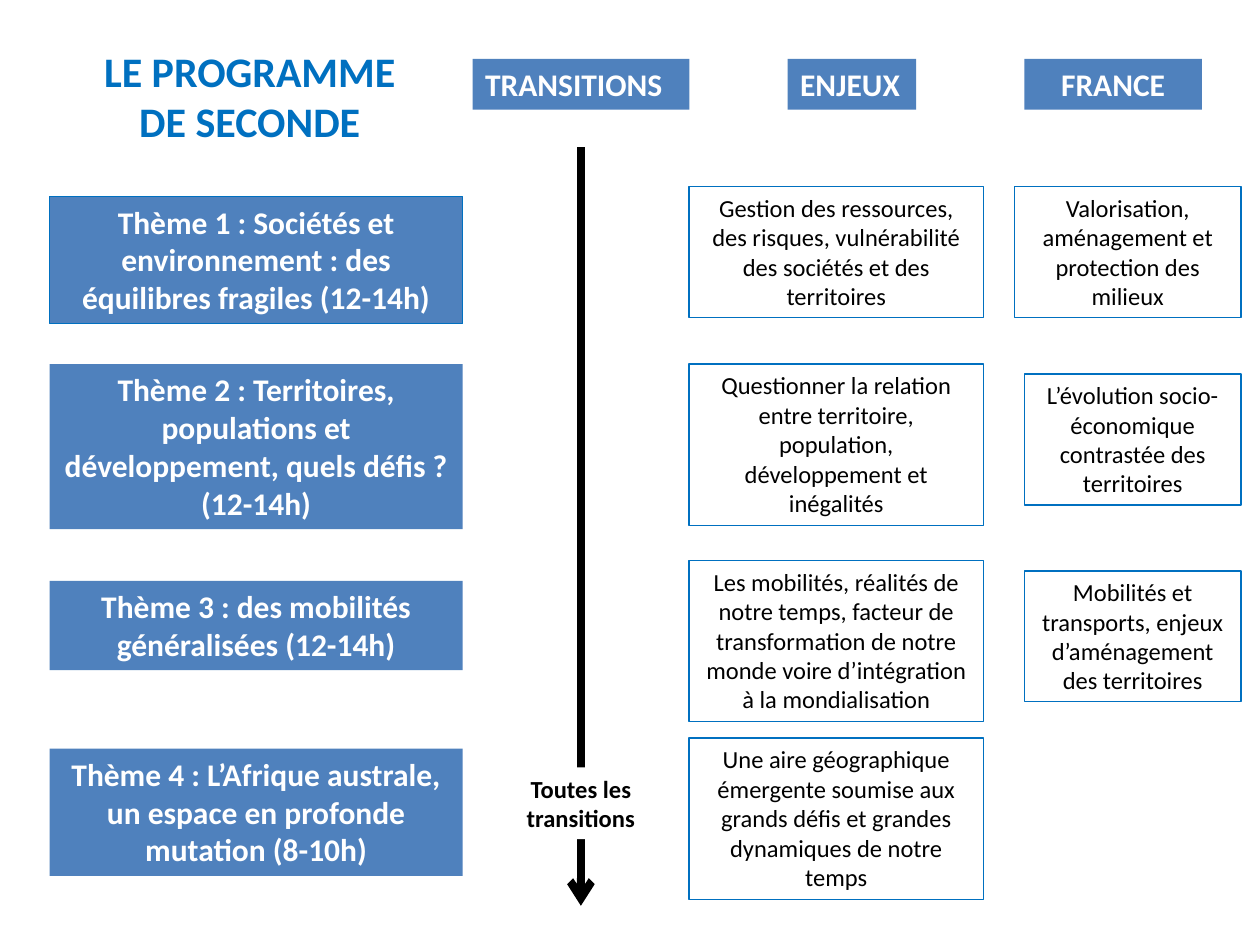
from dataclasses import dataclass
from typing import NamedTuple

from lxml import etree
from pptx import Presentation
from pptx.dml.color import RGBColor
from pptx.enum.shapes import MSO_CONNECTOR, MSO_SHAPE
from pptx.enum.text import MSO_ANCHOR, MSO_AUTO_SIZE, PP_ALIGN
from pptx.oxml.ns import qn
from pptx.util import Cm, Pt

RECTANGLE = MSO_SHAPE.RECTANGLE
STRAIGHT = MSO_CONNECTOR.STRAIGHT
LEFT, CENTER = PP_ALIGN.LEFT, PP_ALIGN.CENTER
TOP = MSO_ANCHOR.TOP
GROW = MSO_AUTO_SIZE.SHAPE_TO_FIT_TEXT
TITLE_ONLY = 5


@dataclass(frozen=True)
class Theme:
    """Colours, type and line widths of the slide."""
    font: str = "Calibri"
    blue: RGBColor = RGBColor(0x4F, 0x81, 0xBD)
    accent: RGBColor = RGBColor(0x00, 0x70, 0xC0)
    white: RGBColor = RGBColor(0xFF, 0xFF, 0xFF)
    black: RGBColor = RGBColor(0x00, 0x00, 0x00)
    title_size: Pt = Pt(24)
    heading_size: Pt = Pt(18)
    body_size: Pt = Pt(14)
    border: Pt = Pt(0.75)
    arrow: Pt = Pt(4.5)


class Box(NamedTuple):
    """Left, top, width and height in centimetres."""
    left: float
    top: float
    width: float
    height: float

    def inner(self, left, top, width, height):
        """Return a box placed relative to this one."""
        return Box(self.left + left, self.top + top, width, height)

    def lengths(self):
        """Return the four values as lengths."""
        return [Cm(value) for value in self]


THEME = Theme()

HEADINGS = [
    ("TRANSITIONS", 0, 4.37, LEFT),
    ("ENJEUX", 6.35, 2.59, LEFT),
    ("FRANCE", 11.12, 3.58, CENTER),
]
THEMES = [
    ("Thème 1 : Sociétés et environnement : des équilibres fragiles (12-14h)", 0, 2.57),
    ("Thème 2 : Territoires, populations et développement, quels défis ? (12-14h)", 3.38, 3.33),
    ("Thème 3 : des mobilités généralisées (12-14h)", 7.75, 1.8),
    ("Thème 4 : L’Afrique australe, un espace en profonde mutation (8-10h)", 11.13, 2.57),
]
ISSUES = [
    ("Gestion des ressources, des risques, vulnérabilité des sociétés et des territoires", 0, 2.64),
    ("Questionner la relation entre territoire, population, développement et inégalités", 3.58, 3.25),
    ("Les mobilités, réalités de notre temps, facteur de transformation de notre monde "
     "voire d’intégration à la mondialisation", 7.54, 3.25),
    ("Une aire géographique émergente soumise aux grands défis et grandes dynamiques "
     "de notre temps", 11.12, 3.25),
]
FRANCE = [
    ("Valorisation, aménagement et protection des milieux", 0, 0),
    ("L’évolution socio-économique contrastée des territoires", 0.2, 3.78),
    ("Mobilités et transports, enjeux d’aménagement des territoires", 0.2, 7.75),
]


def write(shape, text, size, color, bold=False, align=CENTER):
    """Put one formatted paragraph into a shape."""
    frame = shape.text_frame
    frame.text = text
    frame.word_wrap = True
    frame.auto_size = GROW
    frame.vertical_anchor = TOP
    paragraph = frame.paragraphs[0]
    paragraph.alignment = align
    font = paragraph.font
    font.name, font.size, font.bold = THEME.font, size, bold
    font.color.rgb = color


def add_panel(slide, box, fill=None, border=None):
    """Add a rectangle with an optional fill and border."""
    panel = slide.shapes.add_shape(RECTANGLE, *box.lengths())
    panel.shadow.inherit = False
    if fill is None:
        panel.fill.background()
    else:
        panel.fill.solid()
        panel.fill.fore_color.rgb = fill
    if border is None:
        panel.line.fill.background()
    else:
        panel.line.color.rgb = border
        panel.line.width = THEME.border
    return panel


def add_title(slide, box):
    """Place and format the slide title."""
    title = slide.shapes.title
    title.left, title.top, title.width, title.height = box.lengths()
    write(title, "LE PROGRAMME DE SECONDE", THEME.title_size, THEME.accent, True)


def add_headings(slide, box):
    """Add the row of column headings."""
    for text, left, width, align in HEADINGS:
        heading = add_panel(slide, box.inner(left, 0, width, box.height), THEME.blue)
        write(heading, text, THEME.heading_size, THEME.white, True, align)


def add_themes(slide, box):
    """Add the column of programme themes, the first one bordered."""
    for text, top, height in THEMES:
        border = None if top else THEME.accent
        panel = add_panel(slide, box.inner(0, top, box.width, height), THEME.blue, border)
        write(panel, text, THEME.heading_size, THEME.white, True)


def add_note(slide, box, text):
    """Add an outlined box with body text."""
    note = add_panel(slide, box, border=THEME.accent)
    write(note, text, THEME.body_size, THEME.black)


def add_issues(slide, box):
    """Add the column of issues."""
    for text, top, height in ISSUES:
        add_note(slide, box.inner(0, top, box.width, height), text)


def add_france(slide, box):
    """Add the column on France, its boxes flush right."""
    for text, left, top in FRANCE:
        add_note(slide, box.inner(left, top, box.width - left, 2.64), text)


def add_transitions(slide, box):
    """Add the downward arrow and the label lying over it."""
    middle = Cm(box.left + box.width / 2)
    arrow = slide.shapes.add_connector(
        STRAIGHT, middle, Cm(box.top), middle, Cm(box.top + box.height))
    arrow.line.color.rgb = THEME.black
    arrow.line.width = THEME.arrow
    properties = arrow._element.spPr
    etree.SubElement(properties.find(qn("a:ln")), qn("a:tailEnd"), type="arrow")
    etree.SubElement(properties, qn("a:effectLst"))
    label = add_panel(slide, box.inner(0, 12.5, box.width, 1.45), THEME.white)
    write(label, "Toutes les transitions", THEME.body_size, THEME.black, True)


def main():
    """Build and save the slide."""
    deck = Presentation()
    deck.slide_width, deck.slide_height = Cm(25.4), Cm(19.05)
    slide = deck.slides.add_slide(deck.slide_layouts[TITLE_ONLY])
    add_title(slide, Box(1.57, 0.79, 6.93, 2.31))
    add_headings(slide, Box(9.53, 1.19, 14.7, 1.02))
    add_themes(slide, Box(1, 3.96, 8.33, 13.7))
    add_transitions(slide, Box(9.73, 2.97, 3.96, 15.29))
    add_issues(slide, Box(13.89, 3.76, 5.94, 14.37))
    add_france(slide, Box(20.45, 3.76, 4.57, 10.39))
    deck.save("out.pptx")


if __name__ == "__main__":
    main()
